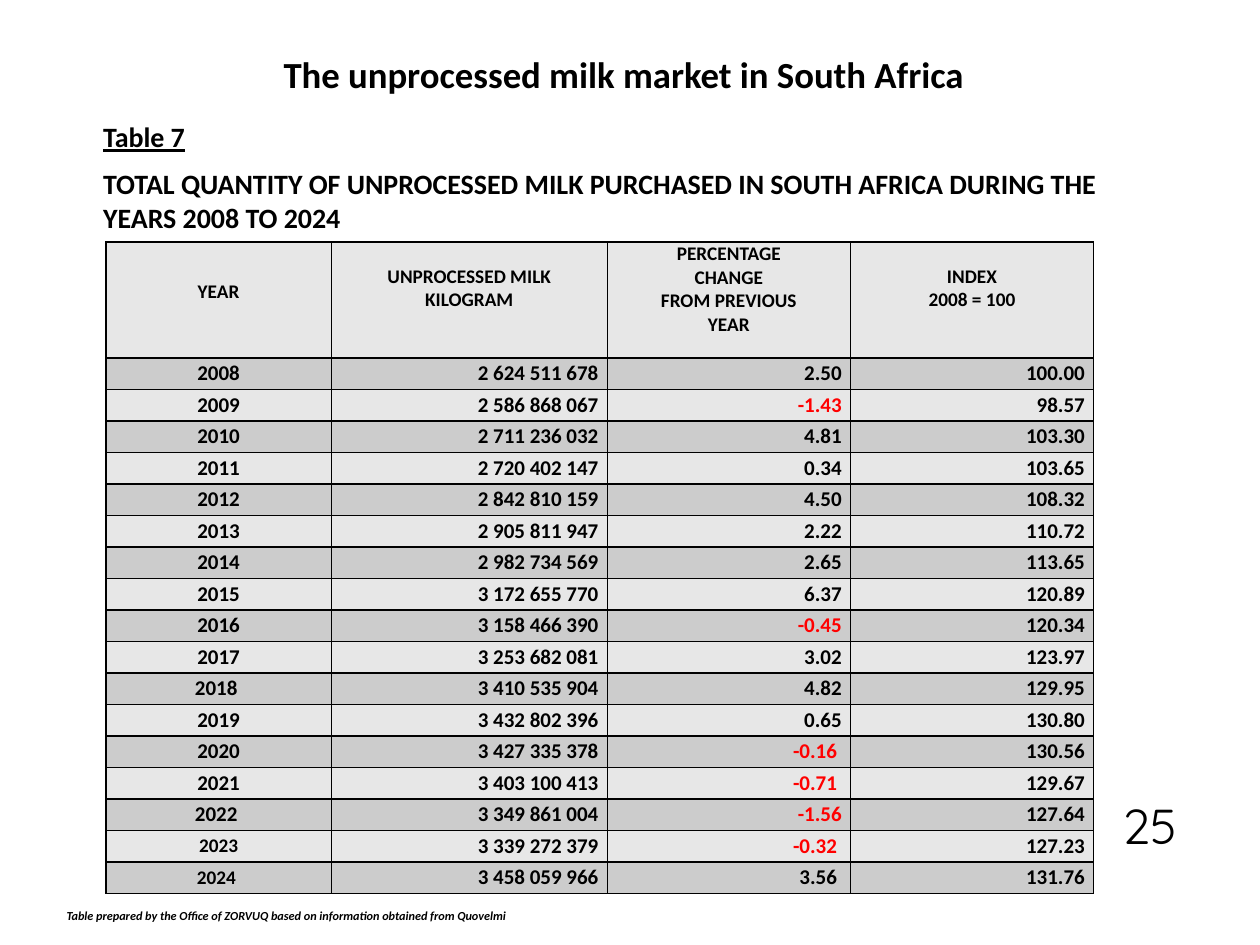
from dataclasses import dataclass

from lxml import etree
from pptx import Presentation
from pptx.dml.color import RGBColor
from pptx.enum.text import MSO_ANCHOR, MSO_AUTO_SIZE, PP_ALIGN
from pptx.oxml.ns import qn
from pptx.util import Inches, Pt

LEFT, CENTER, RIGHT = PP_ALIGN.LEFT, PP_ALIGN.CENTER, PP_ALIGN.RIGHT
TOP, MIDDLE, BOTTOM = MSO_ANCHOR.TOP, MSO_ANCHOR.MIDDLE, MSO_ANCHOR.BOTTOM
GROW, FIXED = MSO_AUTO_SIZE.SHAPE_TO_FIT_TEXT, MSO_AUTO_SIZE.NONE


@dataclass(frozen=True)
class Theme:
    font: str = "Calibri"
    number_font: str = "Quicksand"
    ink: str = "000000"
    negative: str = "FF0000"
    light: str = "E7E7E7"
    dark: str = "CCCCCC"
    title: int = 21
    caption: int = 16
    header: int = 11
    body: int = 12
    source: int = 7
    page: int = 28
    border: int = 1


THEME = Theme()

TITLE = "The unprocessed milk market in South Africa"
TABLE_NAME = "Table 7"
CAPTION = [
    "TOTAL QUANTITY OF UNPROCESSED MILK PURCHASED IN SOUTH AFRICA DURING THE",
    "YEARS 2008 TO 2024",
]
SOURCE = "Table prepared by the Office of ZORVUQ based on information obtained from Quovelmi"
PAGE_NUMBER = "25"

HEADERS = [
    (["YEAR"], 0.3),
    (["UNPROCESSED MILK", "KILOGRAM"], 0.18),
    (["PERCENTAGE", "CHANGE", "FROM PREVIOUS", "YEAR"], 0),
    (["INDEX", "2008 = 100"], 0.18),
]
MILK_ROWS = [
    ("2008", 2624511678, "2.50", "100.00"),
    ("2009", 2586868067, "-1.43", "98.57"),
    ("2010", 2711236032, "4.81", "103.30"),
    ("2011", 2720402147, "0.34", "103.65"),
    ("2012", 2842810159, "4.50", "108.32"),
    ("2013", 2905811947, "2.22", "110.72"),
    ("2014", 2982734569, "2.65", "113.65"),
    ("2015", 3172655770, "6.37", "120.89"),
    ("2016", 3158466390, "-0.45", "120.34"),
    ("2017", 3253682081, "3.02", "123.97"),
    ("2018 ", 3410535904, "4.82", "129.95"),
    ("2019", 3432802396, "0.65", "130.80"),
    ("2020", 3427335378, "-0.16 ", "130.56"),
    ("2021", 3403100413, "-0.71 ", "129.67"),
    ("2022 ", 3349861004, "-1.56", "127.64"),
    ("2023", 3339272379, "-0.32 ", "127.23"),
    ("2024 ", 3458059966, "3.56 ", "131.76"),
]
SMALL_YEARS = ("2023", "2024 ")

TABLE_LEFT, TABLE_TOP = 0.84, 1.92
COLUMN_WIDTHS = [1.79, 2.19, 1.93, 1.93]
HEADER_HEIGHT, ROW_HEIGHT = 0.92, 0.25
CELL_MARGIN = 0.07


def write_text(frame, lines, size, font=THEME.font, color=THEME.ink, bold=True,
               italic=False, underline=False, align=LEFT):
    for index, line in enumerate(lines):
        paragraph = frame.paragraphs[0] if index == 0 else frame.add_paragraph()
        paragraph.alignment = align
        run = paragraph.add_run()
        run.text = line
        run.font.name = font
        run.font.size = Pt(size)
        run.font.bold = bold
        run.font.italic = italic
        run.font.underline = underline
        run.font.color.rgb = RGBColor.from_string(color)


def fill_box(shape, lines, box, size, anchor=TOP, auto_size=GROW, **text_format):
    shape.left, shape.top, shape.width, shape.height = map(Inches, box)
    frame = shape.text_frame
    frame.word_wrap = True
    frame.auto_size = auto_size
    frame.vertical_anchor = anchor
    write_text(frame, lines, size, **text_format)


def add_text(slide, lines, box, size, **box_format):
    shape = slide.shapes.add_textbox(*map(Inches, box))
    fill_box(shape, lines, box, size, **box_format)


def set_borders(cell):
    properties = cell._tc.get_or_add_tcPr()
    for position, side in enumerate(("a:lnL", "a:lnR", "a:lnT", "a:lnB")):
        line = etree.Element(qn(side), w=str(Pt(THEME.border)))
        fill = etree.SubElement(line, qn("a:solidFill"))
        etree.SubElement(fill, qn("a:srgbClr"), val=THEME.ink)
        properties.insert(position, line)


def fill_cell(cell, lines, size, fill, anchor=MIDDLE, margin_top=0, **text_format):
    cell.margin_left = cell.margin_right = Inches(CELL_MARGIN)
    cell.margin_top, cell.margin_bottom = Inches(margin_top), 0
    cell.vertical_anchor = anchor
    cell.fill.solid()
    cell.fill.fore_color.rgb = RGBColor.from_string(fill)
    set_borders(cell)
    write_text(cell.text_frame, lines, size, **text_format)


def add_milk_table(slide):
    heights = [HEADER_HEIGHT] + [ROW_HEIGHT] * len(MILK_ROWS)
    table = slide.shapes.add_table(
        len(heights), len(COLUMN_WIDTHS), Inches(TABLE_LEFT), Inches(TABLE_TOP),
        Inches(sum(COLUMN_WIDTHS)), Inches(sum(heights))).table
    for column, width in zip(table.columns, COLUMN_WIDTHS):
        column.width = Inches(width)
    for row, height in zip(table.rows, heights):
        row.height = Inches(height)

    for column, (lines, margin_top) in enumerate(HEADERS):
        fill_cell(table.cell(0, column), lines, THEME.header, THEME.light,
                  anchor=TOP, margin_top=margin_top, align=CENTER)

    for row, (year, kilograms, change, milk_index) in enumerate(MILK_ROWS, start=1):
        fill = THEME.dark if row % 2 else THEME.light
        values = [year, f"{kilograms:,}".replace(",", " "), change, milk_index]
        for column, value in enumerate(values):
            fill_cell(table.cell(row, column), [value],
                      THEME.header if value in SMALL_YEARS else THEME.body, fill,
                      color=THEME.negative if value.startswith("-") else THEME.ink,
                      align=RIGHT if column else CENTER)


def main():
    presentation = Presentation()
    presentation.slide_width, presentation.slide_height = Inches(10), Inches(7.5)
    slide = presentation.slides.add_slide(presentation.slide_layouts[5])

    add_text(slide, [SOURCE], (0.43, 7.16, 8.33, 0.22), THEME.source,
             anchor=MIDDLE, italic=True)
    add_text(slide, [TABLE_NAME], (0.72, 0.9, 0.96, 0.37), THEME.caption, underline=True)
    add_text(slide, CAPTION, (0.72, 1.27, 8.15, 0.64), THEME.caption, anchor=MIDDLE)
    fill_box(slide.shapes.title, [TITLE], (2.15, 0.36, 5.76, 0.45), THEME.title)
    add_text(slide, [PAGE_NUMBER], (8.5, 6.1, 0.94, 0.73), THEME.page, anchor=BOTTOM,
             auto_size=FIXED, font=THEME.number_font, bold=False, align=RIGHT)
    add_milk_table(slide)
    presentation.save("out.pptx")


if __name__ == "__main__":
    main()
